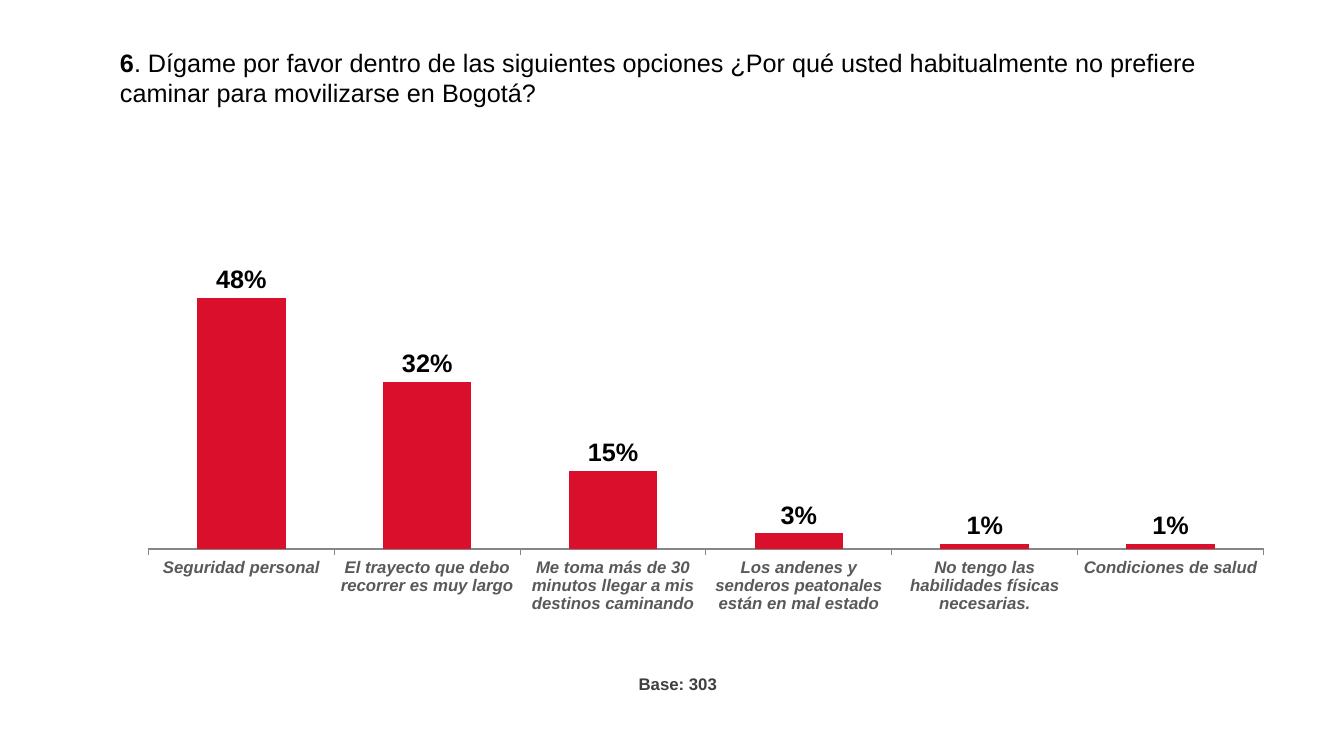
"""Build the slide on why people in Bogotá prefer not to walk."""
from dataclasses import dataclass
from typing import NamedTuple

from lxml import etree
from pptx import Presentation
from pptx import util as u
from pptx.chart.data import CategoryChartData
from pptx.dml.color import RGBColor
from pptx.enum import chart as ch, text as tx
from pptx.oxml.ns import qn


@dataclass(frozen=True)
class Theme:
    """Hold the colours, font and type sizes."""
    face: str = "Arial"
    ink: str = "000000"
    label: str = "595959"
    note: str = "3F3F3F"
    bar: str = "DA0F2B"
    rule: str = "868686"
    big: int = 18
    small: int = 12


class Box(NamedTuple):
    """Give a place in inches."""
    left: float
    top: float
    width: float
    height: float


class Reason(NamedTuple):
    """Pair a reason with its share of answers."""
    name: str
    share: float


THEME = Theme()
REASONS = [
    Reason("Seguridad personal", 0.48),
    Reason("El trayecto que debo recorrer es muy largo", 0.32),
    Reason("Me toma más de 30 minutos llegar a mis destinos caminando", 0.15),
    Reason("Los andenes y senderos peatonales están en mal estado", 0.03),
    Reason("No tengo las habilidades físicas necesarias.", 0.01),
    Reason("Condiciones de salud", 0.01),
]
PLOT = Box(0.052, 0.217, 0.924, 0.629)


def style(font, size: int, color: str, bold: bool = False) -> None:
    """Set the look of a font."""
    font.name = THEME.face
    font.size = u.Pt(size)
    font.bold = bold
    font.color.rgb = RGBColor.from_string(color)


def add_title(slide, box: Box) -> None:
    """Write the question in the title."""
    title = slide.shapes.title
    title.left, title.top, title.width, title.height = map(u.Inches, box)
    frame = title.text_frame
    frame.word_wrap = True
    frame.auto_size = tx.MSO_AUTO_SIZE.NONE
    frame.vertical_anchor = tx.MSO_ANCHOR.TOP
    frame.text = "6"
    para = frame.paragraphs[0]
    para.alignment = tx.PP_ALIGN.LEFT
    para.add_run().text = (
        ". Dígame por favor dentro de las siguientes opciones ¿Por qué usted "
        "habitualmente no prefiere caminar para movilizarse en Bogotá?")
    for run, bold in zip(para.runs, (True, False)):
        style(run.font, THEME.big, THEME.ink, bold)


def set_plot(chart, plot: Box) -> None:
    """Fix the inner plot area as shares of the chart."""
    area = chart._chartSpace.chart.plotArea
    for old in area.findall(qn("c:layout")):
        area.remove(old)
    layout = etree.Element(qn("c:layout"))
    area.insert(0, layout)
    manual = etree.SubElement(layout, qn("c:manualLayout"))
    parts = [("layoutTarget", "inner"), ("xMode", "edge"), ("yMode", "edge")]
    parts += zip("xywh", plot)
    for tag, val in parts:
        etree.SubElement(manual, qn(f"c:{tag}")).set("val", str(val))


def add_bars(slide, box: Box) -> None:
    """Draw the column chart of reasons."""
    data = CategoryChartData(number_format="0%")
    data.categories = [item.name for item in REASONS]
    data.add_series("Series 1", [item.share for item in REASONS])
    chart = slide.shapes.add_chart(
        ch.XL_CHART_TYPE.COLUMN_CLUSTERED, *map(u.Inches, box), data).chart
    chart.has_legend = chart.has_title = False
    style(chart.font, THEME.big, THEME.ink)
    set_plot(chart, PLOT)

    plot = chart.plots[0]
    plot.gap_width, plot.overlap = 110, -100
    plot.vary_by_categories = False
    fill = plot.series[0].format.fill
    fill.solid()
    fill.fore_color.rgb = RGBColor.from_string(THEME.bar)
    plot.has_data_labels = True
    labels = plot.data_labels
    labels.show_value = True
    labels.position = ch.XL_LABEL_POSITION.OUTSIDE_END
    labels.number_format, labels.number_format_is_linked = "0%", False
    style(labels.font, THEME.big, THEME.ink, True)

    value = chart.value_axis
    value.minimum_scale, value.maximum_scale = 0, 0.6
    value.has_major_gridlines = value.visible = False
    names = chart.category_axis
    names.major_tick_mark = ch.XL_TICK_MARK.OUTSIDE
    names.format.line.color.rgb = RGBColor.from_string(THEME.rule)
    names.format.line.width = u.Pt(0.75)
    style(names.tick_labels.font, THEME.small, THEME.label, True)
    names.tick_labels.font.italic = True


def add_base(slide, box: Box) -> None:
    """Write the sample size below the chart."""
    frame = slide.shapes.add_textbox(*map(u.Inches, box)).text_frame
    frame.word_wrap = True
    frame.auto_size = tx.MSO_AUTO_SIZE.SHAPE_TO_FIT_TEXT
    frame.text = "Base: 303"
    para = frame.paragraphs[0]
    para.alignment = tx.PP_ALIGN.RIGHT
    para.line_spacing = 0.83
    style(para.runs[0].font, THEME.small, THEME.note, True)


def main() -> None:
    """Build and save the deck."""
    deck = Presentation()
    deck.slide_width, deck.slide_height = u.Inches(13.33), u.Inches(7.5)
    slide = deck.slides.add_slide(deck.slide_layouts[5])
    add_title(slide, Box(1.09, 0.42, 11.56, 0.72))
    add_bars(slide, Box(0.85, 1.26, 11.97, 4.95))
    add_base(slide, Box(6.23, 6.67, 0.98, 0.25))
    deck.save("out.pptx")


if __name__ == "__main__":
    main()
